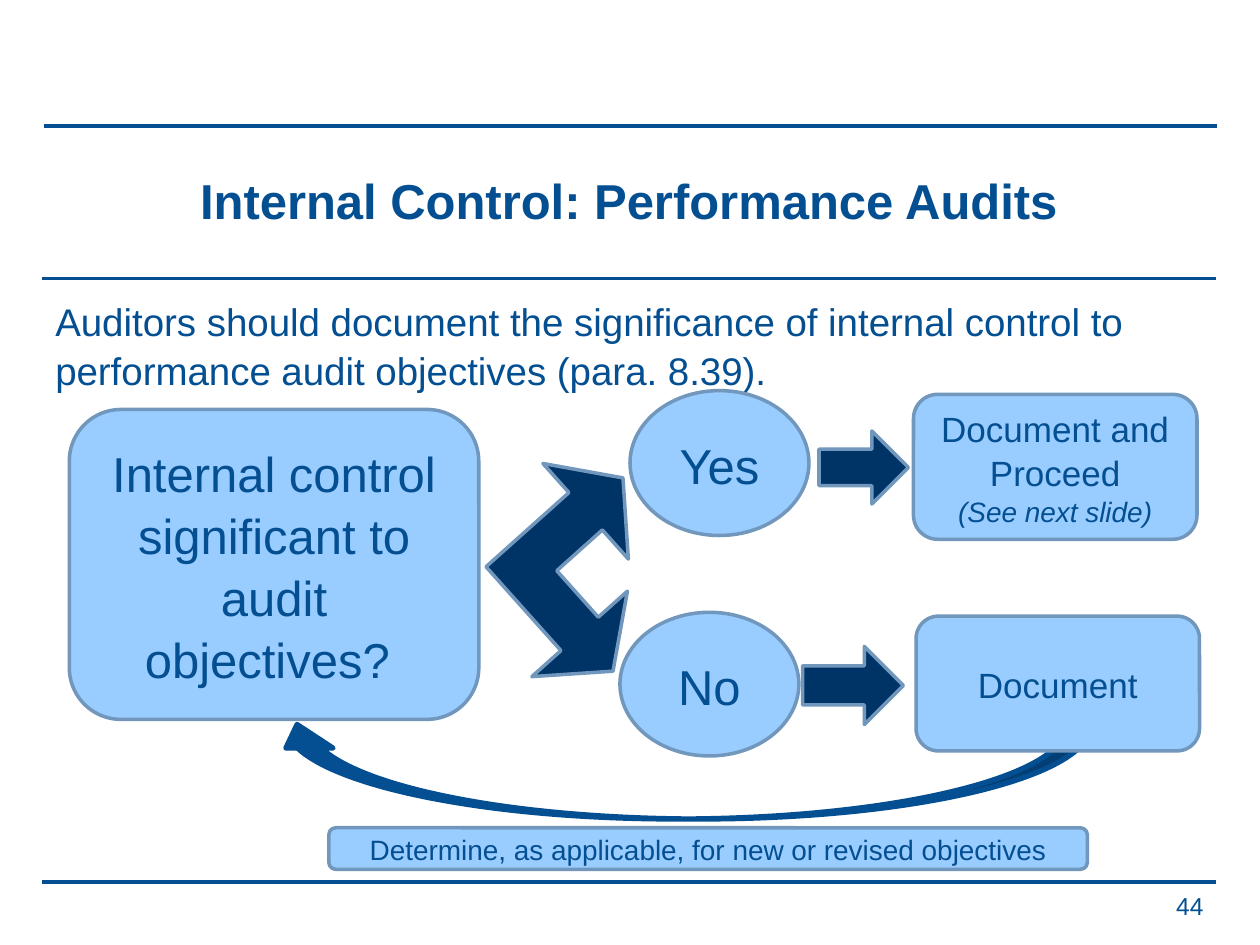
"""Build the slide on internal control in performance audits."""
from lxml import etree
from pptx import Presentation
from pptx.dml.color import RGBColor
from pptx.enum.shapes import MSO_CONNECTOR, MSO_SHAPE
from pptx.enum.text import MSO_ANCHOR, PP_ALIGN
from pptx.oxml.ns import qn
from pptx.util import Pt

ROUND, OVAL = MSO_SHAPE.ROUNDED_RECTANGLE, MSO_SHAPE.OVAL
RIGHT, BENT = MSO_SHAPE.RIGHT_ARROW, MSO_SHAPE.LEFT_UP_ARROW
CURVE = MSO_SHAPE.CURVED_UP_ARROW
MID, TOP = MSO_ANCHOR.MIDDLE, MSO_ANCHOR.TOP
CENTER, START, END = PP_ALIGN.CENTER, PP_ALIGN.LEFT, PP_ALIGN.RIGHT
PX = 9144
COLORS = {"blue": "044F91", "sky": "99CCFF", "navy": "003366", "edge": "7197BD"}

RULES = [(35, 966, 100, 2.5), (33, 965, 700, 2.5), (33, 965, 221, 1.5)]
TEXTS = [
    ((33, 109, 932, 100), MID, CENTER, 1,
     [("Internal Control: Performance Audits", {"size": Pt(28), "bold": True})]),
    ((34, 230, 932, 90), TOP, START, 1.05,
     [("Auditors should document the significance of internal control to "
       "performance audit objectives (para. 8.39).", {"size": Pt(22)})]),
    ((732, 701, 233, 35), MID, END, 1, [("44", {"size": Pt(14)})]),
]
SHAPES = [
    (ROUND, (55, 325, 325, 246), "sky", "edge", 2,
     [("Internal control significant to audit objectives? ", {"size": Pt(28)})]),
    (BENT, (375, 374, 159, 160), "navy", "edge", 2, []),
    (OVAL, (500, 310, 142, 115), "sky", "edge", 2, [("Yes", {"size": Pt(28)})]),
    (OVAL, (492, 486, 142, 114), "sky", "edge", 2, [("No", {"size": Pt(28)})]),
    (RIGHT, (650, 342, 71, 58), "navy", "edge", 2, []),
    (ROUND, (725, 313, 225, 115), "sky", "edge", 2,
     [("Document and Proceed", {"size": Pt(20)}),
      ("(See next slide)", {"size": Pt(16), "italic": True})]),
    (RIGHT, (637, 513, 80, 62), "navy", "edge", 2, []),
    (CURVE, (217, 575, 649, 75), "blue", "blue", 3, []),
    (ROUND, (727, 489, 225, 107), "sky", "edge", 2, [("Document", {"size": Pt(20)})]),
    (ROUND, (261, 657, 602, 33), "sky", "edge", 2,
     [("Determine, as applicable, for new or revised objectives", {"size": Pt(16)})]),
]


def scale(box):
    return [n * PX for n in box]


def tint(name):
    return RGBColor.from_string(COLORS[name])


def write(shape, anchor, align, space, lines):
    frame = shape.text_frame
    frame.word_wrap = True
    frame.vertical_anchor = anchor
    for i, (text, style) in enumerate(lines):
        para = frame.add_paragraph() if i else frame.paragraphs[0]
        para.alignment = align
        para.line_spacing = space
        run = para.add_run()
        run.text = text
        run.font.color.rgb = tint("blue")
        for key, value in {"name": "Arial", **style}.items():
            setattr(run.font, key, value)


def draw_rule(slide, left, right, y, width):
    rule = slide.shapes.add_connector(
        MSO_CONNECTOR.STRAIGHT, *scale((left, y, right, y)))
    rule.line.color.rgb = tint("blue")
    rule.line.width = Pt(width)
    etree.SubElement(rule._element.spPr, qn("a:effectLst"))


def draw_shape(slide, kind, box, fill, edge, width, lines):
    shape = slide.shapes.add_shape(kind, *scale(box))
    shape.shadow.inherit = False
    shape.fill.solid()
    shape.fill.fore_color.rgb = tint(fill)
    shape.line.color.rgb = tint(edge)
    shape.line.width = Pt(width)
    if kind == BENT:
        shape.rotation = 138.2
        shape.adjustments[1] = 0.32
    if kind == CURVE:
        shape._element.spPr.find(qn("a:xfrm")).set("flipH", "1")
    write(shape, MID, CENTER, 1.05, lines)


def main():
    deck = Presentation()
    deck.slide_width, deck.slide_height = scale((1000, 750))
    slide = deck.slides.add_slide(deck.slide_layouts[6])
    for rule in RULES:
        draw_rule(slide, *rule)
    for box, *rest in TEXTS:
        write(slide.shapes.add_textbox(*scale(box)), *rest)
    for item in SHAPES:
        draw_shape(slide, *item)
    deck.save("out.pptx")


if __name__ == "__main__":
    main()
